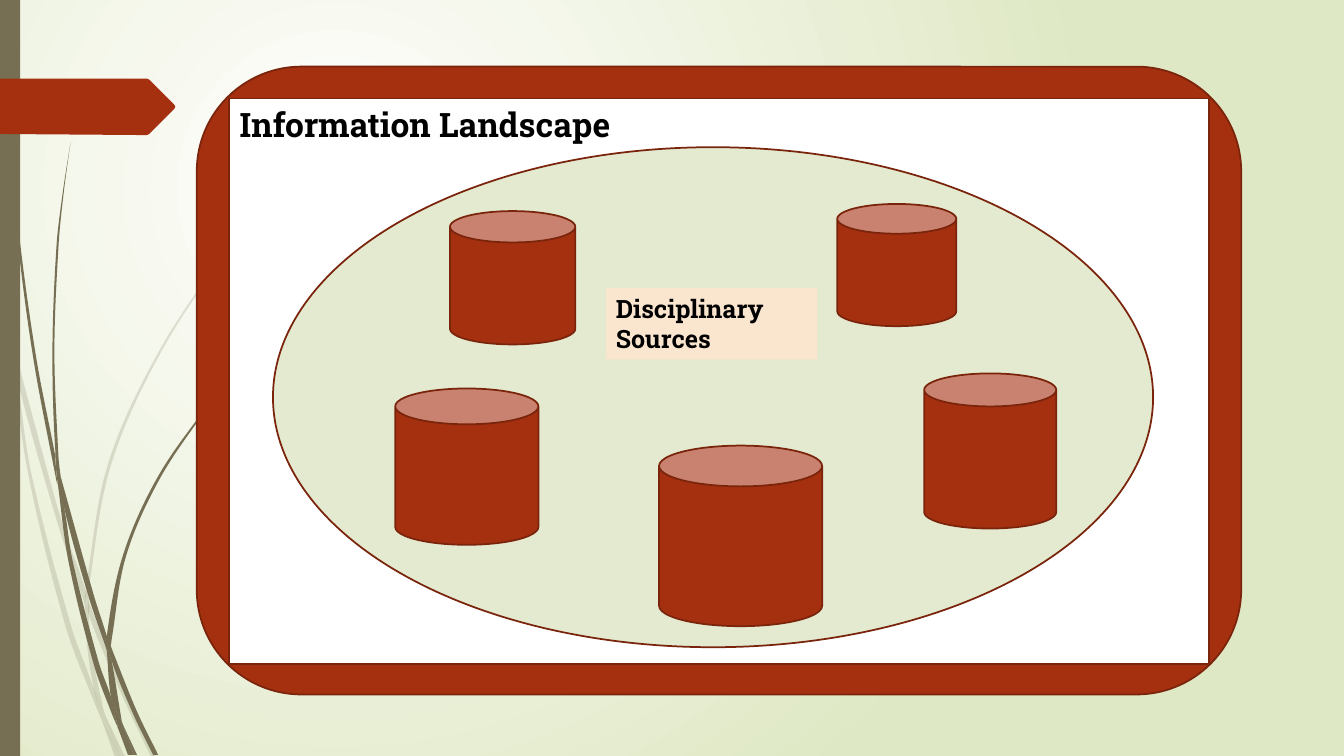
from math import dist
from lxml.etree import SubElement
from pptx import Presentation
from pptx.dml.color import RGBColor
from pptx.enum.shapes import MSO_SHAPE as Shape
from pptx.enum.text import MSO_ANCHOR as Anchor, PP_ALIGN as Align
from pptx.oxml.ns import qn
from pptx.util import Cm, Pt

WHITE = RGBColor(0xFF, 0xFF, 0xFF)
BLACK = RGBColor(0x00, 0x00, 0x00)
PALE_GREEN = RGBColor(0xDF, 0xE8, 0xC4)
OVAL_GREEN = RGBColor(0xE3, 0xEA, 0xCF)
OLIVE = RGBColor(0x76, 0x6F, 0x54)
RUST = RGBColor(0xA5, 0x30, 0x10)
DARK_RUST = RGBColor(0x7A, 0x24, 0x0C)
PEACH = RGBColor(0xFA, 0xE5, 0xCF)

FONT = "Roboto Slab"
INCH = 2.54  # outlines below are in inches
CORNER = 0.8  # cosine below which a turn stays sharp

# Grass blades, each a closed outline of x, y points
FAINT_BLADES = [
    [(0.11, 3.5), (0.09, 3.22), (0, 2.82), (0, 2.99), (0.1, 3.44)],
    [(0.58, 5.22), (0.84, 5.99), (0.85, 5.86), (0.62, 5.2), (0.14, 3.45), (0.17, 3.76)],
    [(0.92, 6.07), (0.88, 5.96), (0.88, 6.1), (1.23, 6.94), (1.5, 7.51), (1.55, 7.51),
     (1.27, 6.92)],
    [(1.19, 7.51), (1.24, 7.51), (1.05, 7.11)],
    [(0.93, 6.83), (0.7, 6.19), (0.31, 4.69), (0.17, 3.76), (0.11, 3.5), (0.28, 4.7),
     (0.65, 6.21), (0.92, 6.93), (1.01, 7.14), (0.99, 7.07)],
    [(0.84, 5.99), (0.87, 6.46), (0.93, 6.83), (0.96, 6.92), (1.05, 7.11), (1.03, 7.06),
     (0.91, 6.46), (0.88, 6.1), (0.88, 6.08)],
    [(0.88, 5.84), (1.1, 4.62), (1.6, 3.49), (2.29, 2.45), (2.68, 1.98), (2.9, 1.75),
     (3.12, 1.54), (3.12, 1.53), (2.89, 1.75), (2.68, 1.97), (2.28, 2.44), (1.58, 3.48),
     (1.07, 4.61), (0.85, 5.84), (0.85, 5.86), (0.88, 5.96)],
    [(1.01, 7.14), (1.14, 7.51), (1.19, 7.51)],
    [(0.88, 6.08), (0.88, 6.1), (0.88, 5.96), (0.85, 5.86), (0.84, 5.99)],
    [(0.96, 6.92), (0.93, 6.83), (0.99, 7.07), (1.01, 7.14), (1.19, 7.51), (1.05, 7.11)],
]
DARK_BLADES = [
    [(0.07, 1.1), (0.17, 2.33), (0.33, 3.55), (0.56, 4.77), (0.57, 4.81), (0.55, 4.57),
     (0.55, 4.53), (0.36, 3.55), (0.19, 2.32), (0.08, 1.09), (0.05, 0.48), (0.04, 0),
     (0.03, 0), (0.04, 0.48)],
    [(0.88, 5.92), (1.06, 6.45), (1.06, 6.33), (1.06, 6.31), (0.93, 5.9), (0.6, 4.72),
     (0.64, 5.05)],
    [(1.13, 6.49), (1.1, 6.41), (1.11, 6.56), (1.32, 7.08), (1.52, 7.49), (1.57, 7.49),
     (1.36, 7.06)],
    [(1.1, 6.91), (0.98, 6.57), (0.72, 5.56), (0.64, 5.05), (0.57, 4.77), (0.68, 5.57),
     (0.93, 6.59), (1.11, 7.08), (1.17, 7.22), (1.16, 7.17)],
    [(0.6, 4.72), (0.58, 4.53), (0.54, 3.49), (0.58, 2.45), (0.63, 1.93), (0.7, 1.41),
     (0.62, 1.93), (0.56, 2.45), (0.52, 3.49), (0.55, 4.49)],
    [(1.33, 7.49), (1.36, 7.49), (1.22, 7.19)],
    [(0.57, 4.77), (0.64, 5.05), (0.6, 4.72), (0.55, 4.49), (0.55, 4.53)],
    [(1.11, 6.33), (1.25, 5.52), (1.58, 4.76), (2.05, 4.06), (2.31, 3.74), (2.45, 3.59),
     (2.61, 3.44), (2.6, 3.44), (2.45, 3.58), (2.31, 3.73), (2.04, 4.05), (1.56, 4.74),
     (1.22, 5.51), (1.06, 6.31), (1.1, 6.41)],
    [(1.17, 7.22), (1.27, 7.49), (1.31, 7.49)],
    [(1.06, 6.45), (1.1, 6.91), (1.16, 7.06), (1.22, 7.19), (1.21, 7.16), (1.11, 6.56),
     (1.09, 6.51)],
    [(1.06, 6.45), (1.09, 6.51), (1.11, 6.56), (1.1, 6.41), (1.06, 6.31), (1.06, 6.33)],
    [(1.16, 7.06), (1.1, 6.91), (1.16, 7.17), (1.17, 7.22), (1.3, 7.49), (1.33, 7.49),
     (1.22, 7.19)],
]
BANNER = [(1.73, 1.08), (1.48, 1.33), (1.46, 1.34), (1.36, 1.34), (0, 1.33), (0, 0.78),
          (1.36, 0.78), (1.46, 0.78), (1.48, 0.79), (1.73, 1.04), (1.74, 1.06)]

# Database cylinders: left, top, width, height in cm
CYLINDERS = [
    (11.34, 5.32, 3.16, 3.36),
    (16.61, 11.23, 4.11, 4.55),
    (9.96, 9.79, 3.61, 3.94),
    (23.29, 9.41, 3.33, 3.91),
    (21.1, 5.14, 3, 3.08),
]


def set_background(slide):
    fill = slide.background.fill
    fill.gradient()
    for stop, color, position in zip(fill.gradient_stops, (WHITE, PALE_GREEN), (0, 1)):
        stop.color.rgb = color
        stop.position = position
    # Turn the straight gradient into a circular one
    gradient = next(slide.element.iter(qn("a:gradFill")))
    gradient.remove(gradient.find(qn("a:lin")))
    circle = SubElement(gradient, qn("a:path"), {"path": "circle"})
    SubElement(circle, qn("a:fillToRect"),
               {"l": "50000", "t": "50000", "r": "100000", "b": "100000"})


def paint(shape, fill, line=None):
    shape.shadow.inherit = False
    shape.fill.solid()
    shape.fill.fore_color.rgb = fill
    if line is None:
        shape.line.fill.background()
    else:
        shape.line.color.rgb = line
        shape.line.width = Pt(1.25)


def add_block(slide, kind, bounds, fill, line=None):
    shape = slide.shapes.add_shape(kind, *map(Cm, bounds))
    paint(shape, fill, line)
    return shape


def add_outline(shapes, points, fill):
    corners = [(Cm(x * INCH), Cm(y * INCH)) for x, y in points]
    builder = shapes.build_freeform(*corners[0])
    builder.add_line_segments(corners[1:], close=True)
    shape = builder.convert_to_shape()
    paint(shape, fill)
    return shape


def direction(start, end):
    length = dist(start, end) or 1
    return (end[0] - start[0]) / length, (end[1] - start[1]) / length


def handle(points, index, towards):
    """Control point beside an outline point, a third of the way to its neighbour."""
    before, here = points[index - 1], points[index]
    after = points[(index + 1) % len(points)]
    arriving, leaving = direction(before, here), direction(here, after)
    smooth = arriving[0] * leaving[0] + arriving[1] * leaving[1] > CORNER
    neighbour = after if towards > 0 else before
    straight = leaving if towards > 0 else arriving
    tangent = direction(before, after) if smooth else straight
    reach = towards * dist(here, neighbour) / 3
    return here[0] + reach * tangent[0], here[1] + reach * tangent[1]


def bend(shape):
    """Turn the straight edges of an outline into curves."""
    outline = next(shape.element.iter(qn("a:path")))
    points = [(int(point.get("x")), int(point.get("y"))) for point in outline.iter(qn("a:pt"))]
    for edge in list(outline)[1:]:
        outline.remove(edge)
    for index in range(len(points)):
        target = (index + 1) % len(points)
        curve = SubElement(outline, qn("a:cubicBezTo"))
        for x, y in (handle(points, index, 1), handle(points, target, -1), points[target]):
            SubElement(curve, qn("a:pt"), {"x": str(round(x)), "y": str(round(y))})
    SubElement(outline, qn("a:close"))


def add_grass(slide, blades, opacity=100):
    group = slide.shapes.add_group_shape()
    for points in blades:
        blade = add_outline(group.shapes, points, OLIVE)
        bend(blade)
        if opacity < 100:
            color = next(blade.element.spPr.iter(qn("a:srgbClr")))
            SubElement(color, qn("a:alpha"), {"val": str(opacity * 1000)})


def write(box, text, size):
    frame = box.text_frame
    frame.word_wrap = True
    frame.vertical_anchor = Anchor.TOP
    para = frame.paragraphs[0]
    para.alignment = Align.LEFT
    span = para.add_run()
    span.text = text
    span.font.color.rgb = BLACK
    for name, value in {"name": FONT, "size": Pt(size), "bold": True}.items():
        setattr(span.font, name, value)


def main():
    deck = Presentation()
    deck.slide_width, deck.slide_height = Cm(33.87), Cm(19.05)
    slide = deck.slides.add_slide(deck.slide_layouts[6])
    set_background(slide)

    # Decoration on the left
    add_grass(slide, FAINT_BLADES, opacity=20)
    add_grass(slide, DARK_BLADES)
    add_block(slide, Shape.RECTANGLE, (0, 0, 0.51, 19.05), OLIVE)
    add_outline(slide.shapes, BANNER, RUST)

    # Framed panel with its heading
    add_block(slide, Shape.ROUNDED_RECTANGLE, (4.96, 1.68, 26.32, 15.82), RUST, DARK_RUST)
    add_block(slide, Shape.RECTANGLE, (5.78, 2.48, 24.69, 14.25), WHITE, DARK_RUST)
    heading = slide.shapes.add_textbox(*map(Cm, (5.79, 2.49, 24.43, 14.63)))
    write(heading, "Information Landscape", 24)

    # Sources inside the landscape
    add_block(slide, Shape.OVAL, (6.88, 3.71, 22.18, 12.6), OVAL_GREEN, DARK_RUST)
    for bounds in CYLINDERS:
        add_block(slide, Shape.CAN, bounds, RUST, DARK_RUST)
    label = add_block(slide, Shape.RECTANGLE, (15.27, 7.26, 5.33, 1.8), PEACH)
    write(label, "Disciplinary Sources", 18)

    deck.save("out.pptx")


if __name__ == "__main__":
    main()
